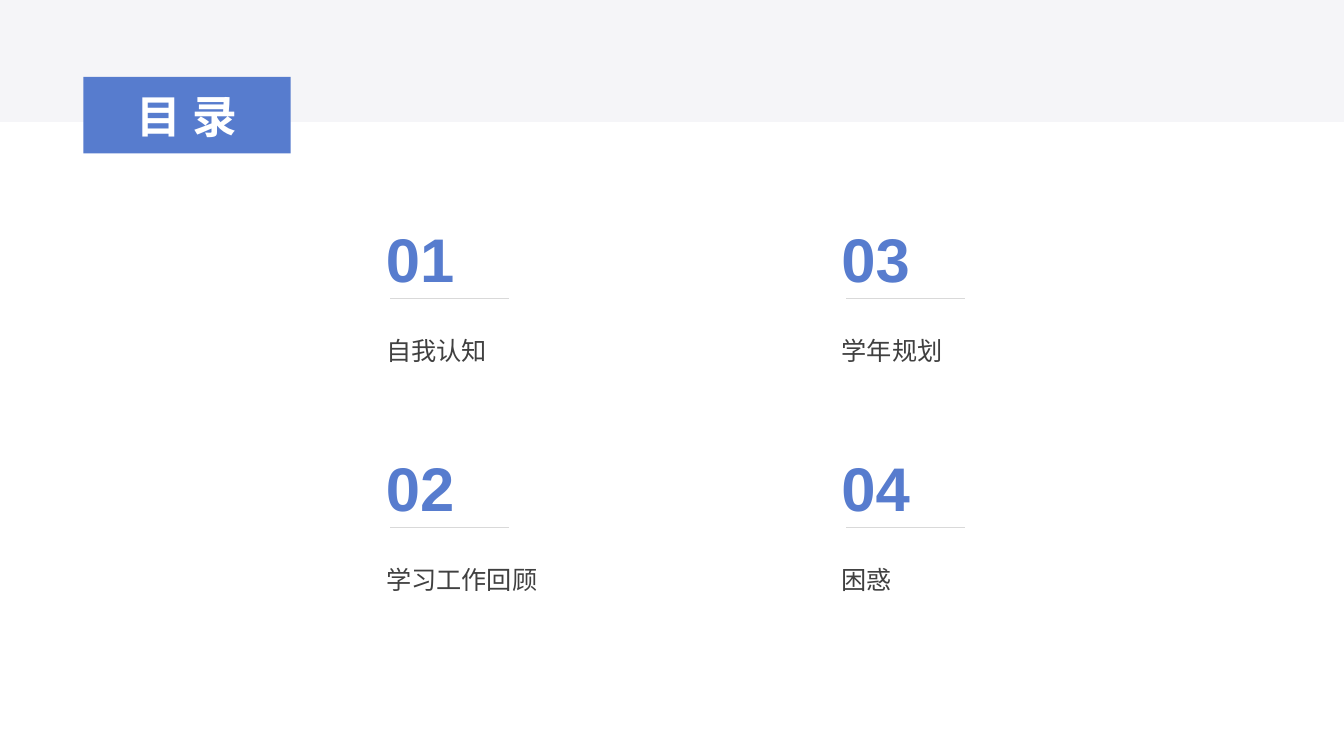
from dataclasses import dataclass

from lxml import etree
from pptx import Presentation
from pptx.dml.color import RGBColor
from pptx.enum import shapes, text
from pptx.oxml import ns
from pptx.util import Pt


@dataclass(frozen=True)
class Theme:
    font: str = "Arial"
    blue: str = "577CCE"
    band: str = "F5F5F8"
    rule: str = "D9D9D9"
    dark: str = "404040"
    white: str = "FFFFFF"
    title: float = 32
    number: float = 44
    label: float = 18


@dataclass(frozen=True)
class Item:
    number: str
    label: str
    col: int
    row: int


THEME = Theme()
ITEMS = [
    Item("01", "自我认知", 0, 0),
    Item("02", "学习工作回顾", 0, 1),
    Item("03", "学年规划", 1, 0),
    Item("04", "困惑", 1, 1),
]
# Grid of the agenda, in points
LEFT, TOP = 268.6, 154
STEP_X, STEP_Y = 325.4, 163.5


def place(shape, x: float, y: float, w: float, h: float) -> None:
    shape.left, shape.top, shape.width, shape.height = map(Pt, (x, y, w, h))


def paint(shape, color: str) -> None:
    shape.fill.solid()
    shape.fill.fore_color.rgb = RGBColor.from_string(color)


def write(shape, words: str, *, size: float, color: str, bold: bool = False,
          align=text.PP_ALIGN.LEFT, anchor=text.MSO_ANCHOR.TOP,
          line: float = 1, after: float = 0, track: float = 0) -> None:
    frame = shape.text_frame
    frame.word_wrap = True
    frame.auto_size = text.MSO_AUTO_SIZE.NONE
    frame.vertical_anchor = anchor
    para = frame.paragraphs[0]
    para.alignment, para.line_spacing = align, line
    para.space_before, para.space_after = Pt(0), Pt(after)
    # No bullet and no hanging indent
    props = para._p.get_or_add_pPr()
    props.set("marL", "0")
    props.set("indent", "0")
    etree.SubElement(props, ns.qn("a:buNone"))
    run = para.add_run()
    run.text = words
    font = run.font
    font.name, font.size, font.bold = THEME.font, Pt(size), bold
    font.color.rgb = RGBColor.from_string(color)
    if track:
        run._r.get_or_add_rPr().set("spc", str(int(track * 100)))


def draw_item(slide, item: Item, holder) -> None:
    x, y = LEFT + item.col * STEP_X, TOP + item.row * STEP_Y
    # Number
    number = slide.shapes.add_textbox(Pt(x), Pt(y), Pt(64), Pt(60.5))
    write(number, item.number, size=THEME.number, color=THEME.blue, bold=True)
    # Thin rule
    rule = slide.shapes.add_connector(
        shapes.MSO_CONNECTOR.STRAIGHT,
        Pt(x + 95), Pt(y + 59.1), Pt(x + 10), Pt(y + 59.1))
    rule.line.color.rgb = RGBColor.from_string(THEME.rule)
    rule.line.width = Pt(0.5)
    etree.SubElement(rule._element.spPr, ns.qn("a:effectLst"))
    # Label
    place(holder, x, y + 71.4, 255, 77)
    write(holder, item.label, size=THEME.label, color=THEME.dark,
          align=text.PP_ALIGN.JUSTIFY, line=1.5, after=20)


def main() -> None:
    deck = Presentation()
    deck.slide_width, deck.slide_height = Pt(960), Pt(540)
    # The comparison layout has a title and four body placeholders
    slide = deck.slides.add_slide(deck.slide_layouts[4])

    # Top band, behind the title
    band = slide.shapes.add_shape(
        shapes.MSO_SHAPE.RECTANGLE, Pt(0), Pt(0), Pt(960), Pt(87.2))
    paint(band, THEME.band)
    band.line.fill.background()
    band.shadow.inherit = False
    slide.shapes._spTree.insert(2, band._element)

    # Title
    title = slide.shapes.title
    place(title, 59.6, 55, 148, 54.5)
    paint(title, THEME.blue)
    write(title, "目录", size=THEME.title, color=THEME.white, bold=True,
          align=text.PP_ALIGN.CENTER, anchor=text.MSO_ANCHOR.MIDDLE, track=8)

    # Agenda
    for idx, item in enumerate(ITEMS, 1):
        draw_item(slide, item, slide.placeholders[idx])

    deck.save("out.pptx")


if __name__ == "__main__":
    main()
